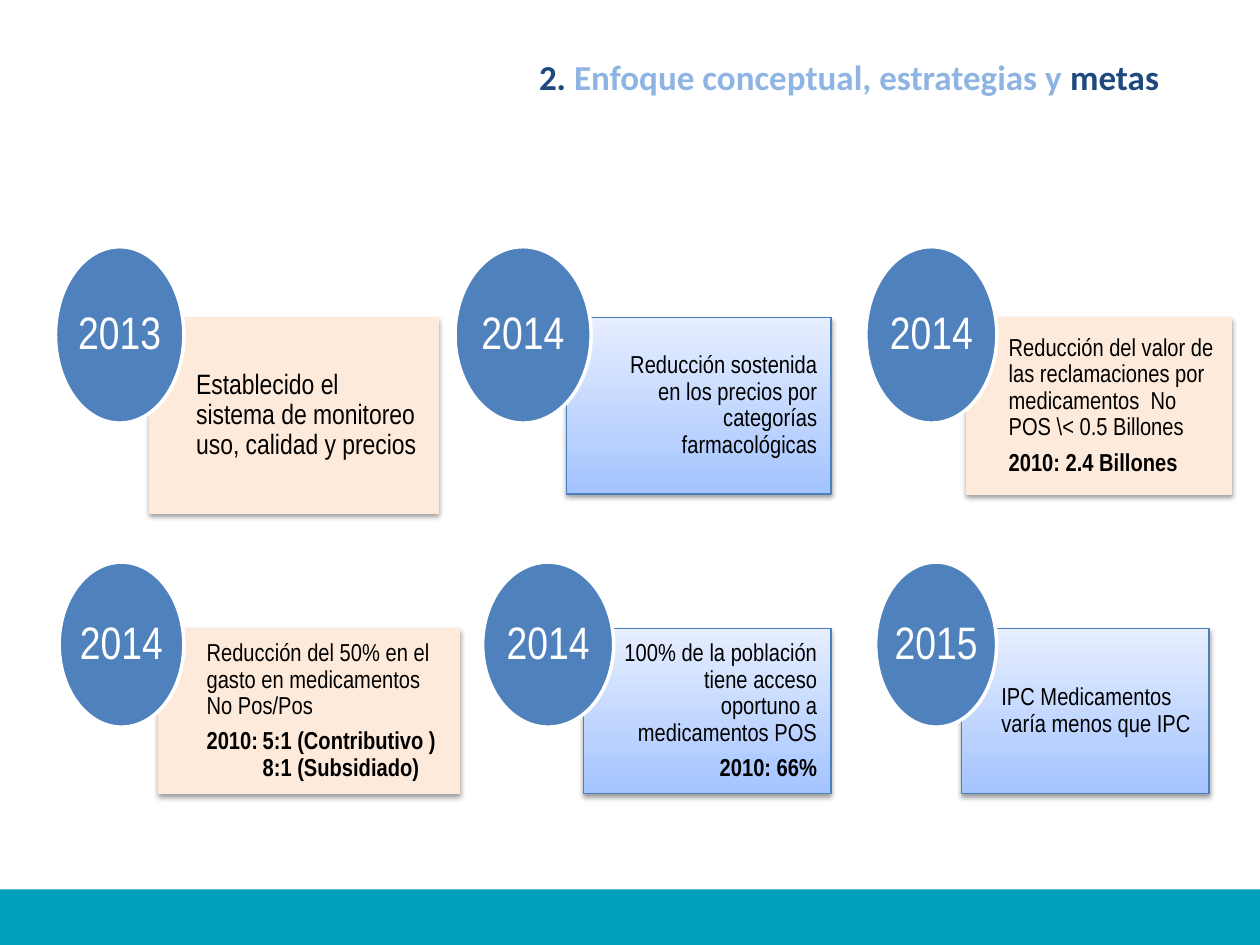
"""Build the slide of yearly goals for medicines policy."""
from lxml import etree
from pptx import Presentation
from pptx.dml.color import RGBColor
from pptx.enum.shapes import MSO_SHAPE
from pptx.enum.text import MSO_ANCHOR, PP_ALIGN
from pptx.oxml.ns import qn
from pptx.util import Pt

RECT, OVAL = MSO_SHAPE.RECTANGLE, MSO_SHAPE.OVAL
LEFT, MID, RIGHT = PP_ALIGN.LEFT, PP_ALIGN.CENTER, PP_ALIGN.RIGHT
TEAL = RGBColor(0x00, 0xA0, 0xBA)
PEACH = RGBColor(0xFD, 0xEA, 0xDA)
BLUE = RGBColor(0x4F, 0x81, 0xBD)
EDGE = RGBColor(0x4B, 0x7E, 0xBC)
DEEP = RGBColor(0xA4, 0xC4, 0xFF)
PALE = RGBColor(0xE6, 0xEE, 0xFF)
NAVY = RGBColor(0x1F, 0x49, 0x7D)
SKY = RGBColor(0x8E, 0xB4, 0xE3)
BLACK = RGBColor(0, 0, 0)
WHITE = RGBColor(255, 255, 255)
FACE = "Arial Narrow"
INDENT, TAB = 0.16, 32

TITLE = [("2. ", NAVY), ("Enfoque conceptual, estrategias y ", SKY), ("metas", NAVY)]

ROWS = [
    {"oval_y": 141, "box_y": 181.5, "high": 100.8, "cards": [
        {"year": "2013", "oval": (31.7, 73.4), "box": (85.7, 165), "high": 111.8, "size": 16,
         "text": "Establecido el sistema de monitoreo uso, calidad y precios"},
        {"year": "2014", "oval": (260, 77.8), "box": (323.7, 151.2), "cool": True, "align": RIGHT,
         "text": "Reducción sostenida en los precios por categorías farmacológicas"},
        {"year": "2014", "oval": (494.8, 74.9), "box": (552.2, 151.3),
         "text": "Reducción del valor de las reclamaciones por medicamentos  No POS \\< 0.5 Billones",
         "base": "2010: 2.4 Billones"},
    ]},
    {"oval_y": 321.2, "box_y": 359.3, "high": 94.3, "cards": [
        {"year": "2014", "oval": (33.8, 71.3), "box": (90.5, 172.3),
         "text": "Reducción del 50% en el gasto en medicamentos No Pos/Pos",
         "base": "2010:\t5:1 (Contributivo )\v\t8:1 (Subsidiado)"},
        {"year": "2014", "oval": (275.8, 74.9), "box": (333.5, 141.3), "cool": True, "align": RIGHT,
         "text": "100% de la población tiene acceso oportuno a medicamentos POS",
         "base": "2010: 66%"},
        {"year": "2015", "oval": (500.4, 69.1), "box": (549.6, 141.3), "cool": True,
         "text": "IPC Medicamentos varía menos que IPC"},
    ]},
]


def draw(slide, kind, x, y, w, h, fill=None):
    shape = slide.shapes.add_shape(kind, Pt(x), Pt(y), Pt(w), Pt(h))
    shape.shadow.inherit = False
    if fill is not None:
        shape.fill.solid()
        shape.fill.fore_color.rgb = fill
    return shape


def edge(shape, color, width):
    shape.line.color.rgb = color
    shape.line.width = Pt(width)


def shade(shape):
    glow = etree.SubElement(shape._element.spPr.find(qn("a:effectLst")), qn("a:outerShdw"),
                            blurRad=str(Pt(3.1)), dist=str(Pt(1.6)), dir="5400000", rotWithShape="0")
    tint = etree.SubElement(glow, qn("a:srgbClr"), val="000000")
    etree.SubElement(tint, qn("a:alpha"), val="38000")


def blend(shape):
    shape.fill.gradient()
    shape.fill.gradient_angle = 90
    for stop, color in zip(shape.fill.gradient_stops, (DEEP, PALE)):
        stop.color.rgb = color


def write(shape, lines, size, color, align, pad):
    frame = shape.text_frame
    frame.word_wrap = True
    frame.vertical_anchor = MSO_ANCHOR.MIDDLE
    frame.margin_left, frame.margin_top, frame.margin_right, frame.margin_bottom = map(Pt, pad)
    for i, line in enumerate(lines):
        para = frame.add_paragraph() if i else frame.paragraphs[0]
        para.text = line
        para.alignment = align
        para.line_spacing = 0.9
        para.space_after = Pt(round(size * 0.35, 1))
        if "\t" in line:
            tabs = etree.SubElement(para._p.get_or_add_pPr(), qn("a:tabLst"))
            etree.SubElement(tabs, qn("a:tab"), pos=str(Pt(TAB)), algn="l")
        font = para.font
        font.name, font.size, font.bold = FACE, Pt(size), i > 0
        font.color.rgb = color


def add_card(slide, row, card):
    x, w = card["box"]
    box = draw(slide, RECT, x, row["box_y"], w, card.get("high", row["high"]))
    if card.get("cool"):
        blend(box)
        edge(box, EDGE, 0.75)
    else:
        box.fill.solid()
        box.fill.fore_color.rgb = PEACH
        edge(box, PEACH, 0.75)
    shade(box)
    lines = [card[key] for key in ("text", "base") if key in card]
    size = card.get("size", 14)
    gap = size * 0.56
    write(box, lines, size, BLACK, card.get("align", LEFT), (w * INDENT, gap, gap, gap))

    x, w = card["oval"]
    oval = draw(slide, OVAL, x, row["oval_y"], w, row["high"], BLUE)
    edge(oval, WHITE, 2)
    write(oval, [card["year"]], 26, WHITE, MID, (0, 0, 0, 0))


def add_title(slide):
    frame = slide.shapes.add_textbox(Pt(253.4), Pt(28), Pt(416), Pt(31.5)).text_frame
    frame.word_wrap = True
    para = frame.paragraphs[0]
    para.alignment = RIGHT
    para.font.name, para.font.size, para.font.bold = "Calibri", Pt(20), True
    for text, color in TITLE:
        run = para.add_run()
        run.text = text
        run.font.color.rgb = color


def main():
    deck = Presentation()
    deck.slide_width, deck.slide_height = Pt(720), Pt(540)
    slide = deck.slides.add_slide(deck.slide_layouts[6])
    band = draw(slide, RECT, 0, 508.2, 720, 31.8, TEAL)
    band.line.fill.background()
    for row in ROWS:
        for card in row["cards"]:
            add_card(slide, row, card)
    add_title(slide)
    deck.save("out.pptx")


if __name__ == "__main__":
    main()
